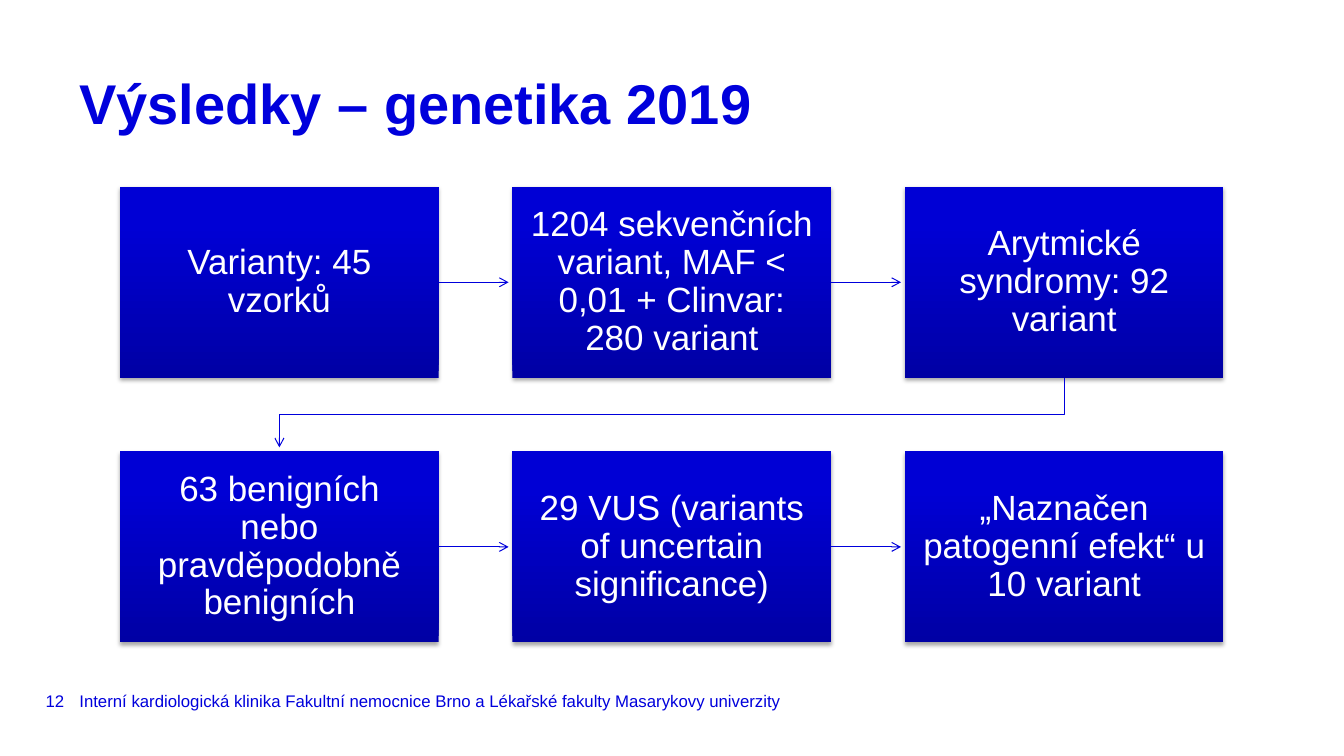
from copy import deepcopy

from lxml import etree
from pptx import Presentation
from pptx.dml.color import RGBColor
from pptx.enum.shapes import MSO_CONNECTOR, MSO_SHAPE
from pptx.enum.text import MSO_ANCHOR, PP_ALIGN
from pptx.oxml.ns import qn
from pptx.util import Pt

RECTANGLE = MSO_SHAPE.RECTANGLE
STRAIGHT = MSO_CONNECTOR.STRAIGHT
TOP, MIDDLE = MSO_ANCHOR.TOP, MSO_ANCHOR.MIDDLE
CENTER = PP_ALIGN.CENTER

BLUE = RGBColor(0x00, 0x00, 0xDC)
WHITE = RGBColor(0xFF, 0xFF, 0xFF)
GRADIENT = [
    (0, RGBColor(0x00, 0x00, 0xA4)),
    (0.8, RGBColor(0x00, 0x00, 0xD5)),
    (1, RGBColor(0x00, 0x00, 0xD6)),
]

TITLE_FONT = {"name": "Arial", "size": Pt(40), "bold": True}
STEP_FONT = {"name": "Arial", "size": Pt(25)}
FOOTER_FONT = {"name": "Arial", "size": Pt(12)}

LEFT, TOP_ROW = 85.8, 133.4
BOX_WIDTH, BOX_HEIGHT = 227.5, 136.5
COLUMN_STEP, ROW_STEP = 280.3, 189
COLUMNS = 3
ARROW_GAP = 2.8
STEPS = [
    "Varianty: 45 vzorků",
    "1204 sekvenčních variant, MAF < 0,01 + Clinvar: 280 variant",
    "Arytmické syndromy: 92 variant",
    "63 benigních nebo pravděpodobně benigních",
    "29 VUS (variants of uncertain significance)",
    "„Naznačen patogenní efekt“ u 10 variant",
]


def write_text(shape, text, font, color, inset=0, anchor=MIDDLE, wrap=True,
               **paragraph_format):
    frame = shape.text_frame
    frame_format = {"word_wrap": wrap, "vertical_anchor": anchor}
    for side in ("left", "right", "top", "bottom"):
        frame_format[f"margin_{side}"] = Pt(inset)
    for name, value in frame_format.items():
        setattr(frame, name, value)
    para = frame.paragraphs[0]
    for name, value in paragraph_format.items():
        setattr(para, name, value)
    span = para.add_run()
    span.text = text
    for name, value in font.items():
        setattr(span.font, name, value)
    span.font.color.rgb = color


def add_label(page, left, top, width, height, text, font, **text_format):
    box = page.shapes.add_textbox(Pt(left), Pt(top), Pt(width), Pt(height))
    write_text(box, text, font, BLUE, **text_format)


def fill_gradient(shape):
    shape.fill.gradient()
    shape.fill.gradient_angle = 90
    stop_list = next(shape.element.spPr.iter(qn("a:gsLst")))
    stop_list.append(deepcopy(stop_list[0]))
    for stop, (position, color) in zip(shape.fill.gradient_stops, GRADIENT):
        stop.position = position
        stop.color.rgb = color


def add_shadow(shape):
    shape.shadow.inherit = False
    effects = shape.element.spPr.find(qn("a:effectLst"))
    shadow = etree.SubElement(
        effects, qn("a:outerShdw"), blurRad=str(Pt(3.1)), dist=str(Pt(1.8)),
        dir="5400000", rotWithShape="0")
    black = etree.SubElement(shadow, qn("a:srgbClr"), val="000000")
    etree.SubElement(black, qn("a:alpha"), val="35000")


def step_position(index):
    row, column = divmod(index, COLUMNS)
    return LEFT + column * COLUMN_STEP, TOP_ROW + row * ROW_STEP


def add_step(page, index, text):
    left, top = step_position(index)
    box = page.shapes.add_shape(
        RECTANGLE, Pt(left), Pt(top), Pt(BOX_WIDTH), Pt(BOX_HEIGHT))
    fill_gradient(box)
    box.line.fill.background()
    add_shadow(box)
    write_text(box, text, STEP_FONT, WHITE, inset=11.5,
               alignment=CENTER, line_spacing=0.9)


def style_arrow(arrow):
    arrow.line.color.rgb = BLUE
    arrow.line.width = Pt(0.75)
    properties = arrow.element.spPr
    etree.SubElement(properties.find(qn("a:ln")), qn("a:tailEnd"), type="arrow")
    etree.SubElement(properties, qn("a:effectLst"))


def add_row_arrow(page, index):
    left, top = step_position(index)
    middle = top + BOX_HEIGHT / 2
    arrow = page.shapes.add_connector(
        STRAIGHT, Pt(left + BOX_WIDTH), Pt(middle),
        Pt(left + COLUMN_STEP - ARROW_GAP), Pt(middle))
    style_arrow(arrow)


def add_return_arrow(page, index):
    start_left, start_top = step_position(index)
    end_left, end_top = step_position(index + 1)
    start_x, end_x = start_left + BOX_WIDTH / 2, end_left + BOX_WIDTH / 2
    start_y = start_top + BOX_HEIGHT
    turn_y = (start_y + end_top) / 2
    corners = [(start_x, turn_y), (end_x, turn_y), (end_x, end_top - ARROW_GAP)]
    outline = page.shapes.build_freeform(Pt(start_x), Pt(start_y))
    outline.add_line_segments([(Pt(x), Pt(y)) for x, y in corners], close=False)
    arrow = outline.convert_to_shape()
    arrow.fill.background()
    style_arrow(arrow)


def main():
    deck = Presentation()
    deck.slide_width, deck.slide_height = Pt(960), Pt(540)
    page = deck.slides.add_slide(deck.slide_layouts[6])

    add_label(page, 56.7, 56.7, 847, 35.5, "Výsledky – genetika 2019",
              TITLE_FONT, anchor=TOP, line_spacing=Pt(40))
    for index, text in enumerate(STEPS):
        add_step(page, index, text)
    for index in range(len(STEPS) - 1):
        if (index + 1) % COLUMNS:
            add_row_arrow(page, index)
        else:
            add_return_arrow(page, index)
    add_label(page, 32.6, 490.4, 20, 20, "12", FOOTER_FONT, wrap=False)
    add_label(
        page, 56.7, 490.4, 623.6, 20,
        "Interní kardiologická klinika Fakultní nemocnice Brno"
        " a Lékařské fakulty Masarykovy univerzity", FOOTER_FONT)

    deck.save("out.pptx")


if __name__ == "__main__":
    main()
